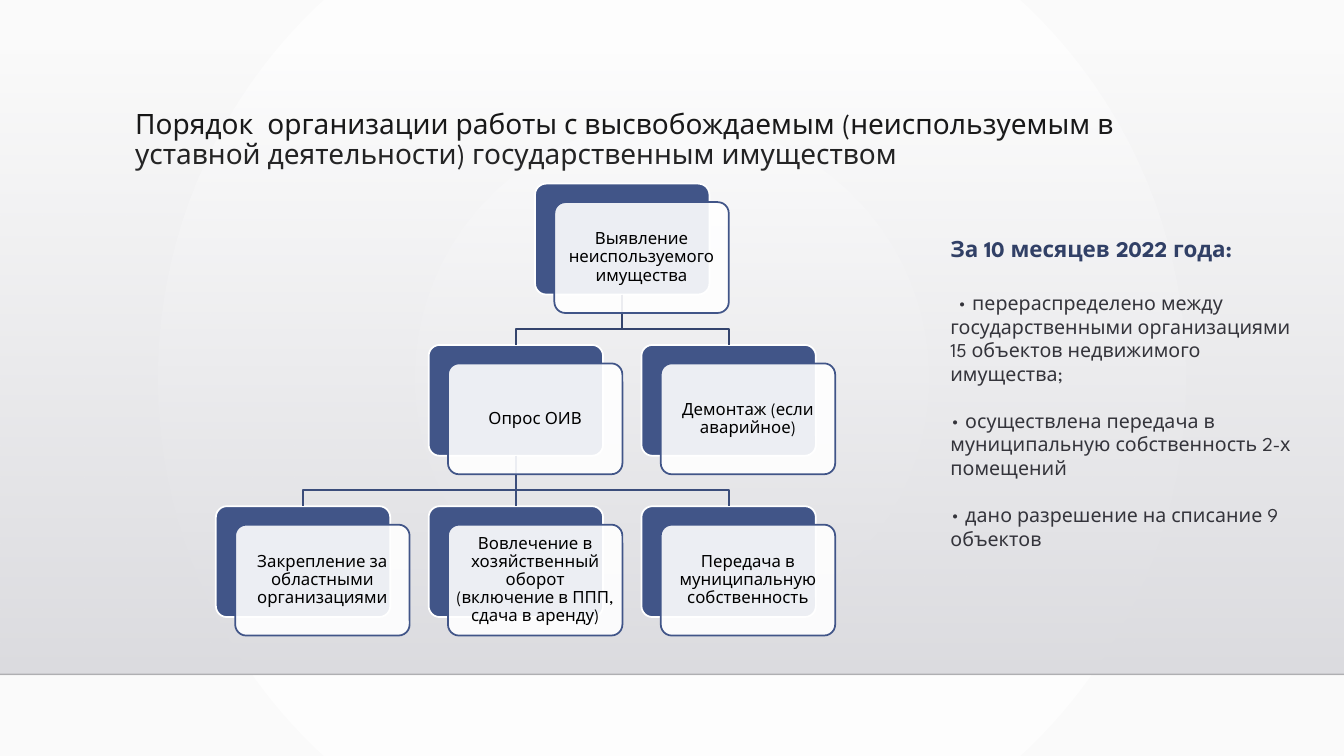
from lxml.etree import SubElement
from pptx import Presentation
from pptx.dml.color import RGBColor
from pptx.enum.shapes import MSO_CONNECTOR, MSO_SHAPE
from pptx.enum.text import MSO_ANCHOR, MSO_AUTO_SIZE, PP_ALIGN
from pptx.oxml import parse_xml
from pptx.oxml.ns import nsdecls, qn
from pptx.util import Pt

FONT = "League Spartan"
COLORS = {
    "black": "000000", "white": "FFFFFF", "card": "415588",
    "upper_link": "34446D", "lower_link": "3B4D7B",
    "heading": "314066", "body": "34343B", "rule": "000001",
    "fade_top": "DCDCE0", "fade_bottom": "DEDEE2", "backdrop": "FAFAFA",
}


def add_span(para, text, size, color, bold=False):
    span = para.add_run()
    span.text = text
    span.font.name = FONT
    span.font.size = Pt(size)
    span.font.bold = bold
    span.font.color.rgb = RGBColor.from_string(COLORS[color])


def set_alpha(color_parent, percent):
    for color in color_parent.iter(qn("a:srgbClr")):
        SubElement(color, qn("a:alpha"), val=str(percent * 1000))


deck = Presentation()
deck.slide_width, deck.slide_height = Pt(960), Pt(540)
page = deck.slides.add_slide(deck.slide_layouts[5])
shapes = page.shapes

# Background: radial gradient
page.background.fill.solid()
back_props = page.background.fill._xPr
back_props.replace(back_props.find(qn("a:solidFill")), parse_xml(
    f'<a:gradFill {nsdecls("a")} rotWithShape="1"><a:gsLst>'
    f'<a:gs pos="0"><a:srgbClr val="{COLORS["white"]}"/></a:gs>'
    f'<a:gs pos="100000"><a:srgbClr val="{COLORS["backdrop"]}"/></a:gs></a:gsLst>'
    '<a:path path="circle"><a:fillToRect l="50000" t="50000" r="50000" b="50000"/>'
    '</a:path></a:gradFill>'))

# Grey fade and the rule under it
fade = shapes.add_shape(MSO_SHAPE.RECTANGLE, 0, Pt(36.7), Pt(960), Pt(445))
fade.shadow.inherit = False
fade.line.fill.background()
fade.fill.gradient()
fade.fill.gradient_angle = 270
stops = zip(fade.fill.gradient_stops, ("fade_top", "fade_bottom"), (0, 100), (0, 1))
for stop, color, alpha, position in stops:
    stop.position = position
    stop.color.rgb = RGBColor.from_string(COLORS[color])
    set_alpha(stop._gs, alpha)

rule = shapes.add_connector(MSO_CONNECTOR.STRAIGHT, 0, Pt(481.7), Pt(960), Pt(481.7))
rule.line.width = Pt(1)
rule.line.color.rgb = RGBColor.from_string(COLORS["rule"])
set_alpha(rule.line._ln, 20)
SubElement(rule._element.spPr, qn("a:effectLst"))

# Title
title = shapes.title
title.left, title.top, title.width, title.height = Pt(89.3), Pt(74.9), Pt(756), Pt(82.8)
title.text_frame.auto_size = MSO_AUTO_SIZE.NONE
title.text_frame.word_wrap = True
title.text_frame.vertical_anchor = MSO_ANCHOR.TOP
para = title.text_frame.paragraphs[0]
para.alignment = PP_ALIGN.LEFT
para.line_spacing = 0.9
add_span(para, "Порядок  организации работы с высвобождаемым (неиспользуемым в "
         "уставной деятельности) государственным имуществом", 20, "black")

# Chart layout: column, row and label of each step
LEFT, TOP, COLUMN_STEP, ROW_STEP = 154.2, 131.2, 152, 115.2
CARD_WIDTH, CARD_HEIGHT, SHIFT_X, SHIFT_Y = 124.6, 79.2, 13.8, 13.2
STEPS = {
    "detect": (1.5, 0, "Выявление неиспользуемого имущества"),
    "survey": (1, 1, "Опрос ОИВ"),
    "dismantle": (2, 1, "Демонтаж (если аварийное)"),
    "assign": (0, 2, "Закрепление за областными организациями"),
    "engage": (1, 2, "Вовлечение в хозяйственный оборот (включение в ППП, сдача в аренду)"),
    "transfer": (2, 2, "Передача в муниципальную собственность"),
}
LINKS = [
    ("detect", "survey", "upper_link"), ("detect", "dismantle", "upper_link"),
    ("survey", "assign", "lower_link"), ("survey", "engage", "lower_link"),
    ("survey", "transfer", "lower_link"),
]

# Blue cards
cards = {}
for name, (column, row, label) in STEPS.items():
    card = shapes.add_shape(
        MSO_SHAPE.ROUNDED_RECTANGLE, Pt(LEFT + column * COLUMN_STEP),
        Pt(TOP + row * ROW_STEP), Pt(CARD_WIDTH), Pt(CARD_HEIGHT))
    card.adjustments[0] = 0.1
    card.shadow.inherit = False
    card.fill.solid()
    card.fill.fore_color.rgb = RGBColor.from_string(COLORS["card"])
    card.line.width = Pt(1.25)
    card.line.color.rgb = RGBColor.from_string(COLORS["white"])
    cards[name] = card

# Links from each card to the ones below
for parent, child, color in LINKS:
    start, end = cards[parent], cards[child]
    start_x, end_x = start.left + start.width // 2, end.left + end.width // 2
    start_y, end_y = start.top + start.height, end.top
    if start.left == end.left:
        link = shapes.add_connector(MSO_CONNECTOR.STRAIGHT, start_x, start_y, end_x, end_y)
        link.begin_connect(start, 2)
        link.end_connect(end, 0)
        SubElement(link._element.spPr, qn("a:effectLst"))
    else:
        turn_y = end_y - Pt(11.5)
        builder = shapes.build_freeform(start_x, start_y)
        builder.add_line_segments(
            [(start_x, turn_y), (end_x, turn_y), (end_x, end_y)], close=False)
        link = builder.convert_to_shape()
        link.shadow.inherit = False
        link.fill.background()
    link.line.width = Pt(1.25)
    link.line.color.rgb = RGBColor.from_string(COLORS[color])

# White panels with the labels
for name, (column, row, label) in STEPS.items():
    card = cards[name]
    panel = shapes.add_shape(
        MSO_SHAPE.ROUNDED_RECTANGLE, card.left + Pt(SHIFT_X), card.top + Pt(SHIFT_Y),
        card.width, card.height)
    panel.adjustments[0] = 0.1
    panel.shadow.inherit = False
    panel.fill.solid()
    panel.fill.fore_color.rgb = RGBColor.from_string(COLORS["white"])
    set_alpha(panel._element.spPr, 90)
    panel.line.width = Pt(1.25)
    panel.line.color.rgb = RGBColor.from_string(COLORS["card"])
    frame = panel.text_frame
    frame.word_wrap = True
    frame.vertical_anchor = MSO_ANCHOR.MIDDLE
    frame.margin_left = frame.margin_right = Pt(3.6)
    frame.margin_top = frame.margin_bottom = Pt(3.6)
    para = frame.paragraphs[0]
    para.alignment = PP_ALIGN.CENTER
    para.line_spacing = 0.9
    add_span(para, label, 12, "black")

# Results on the right
results = shapes.add_textbox(Pt(671.8), Pt(164.2), Pt(266.4), Pt(237.6))
frame = results.text_frame
frame.word_wrap = True
frame.auto_size = MSO_AUTO_SIZE.SHAPE_TO_FIT_TEXT
add_span(frame.paragraphs[0], "За 10 месяцев 2022 года:", 16, "heading", bold=True)
RESULTS = [
    ("• перераспределено между государственными организациями "
     "15 объектов недвижимого имущества;", 21, 5),
    ("• осуществлена передача в муниципальную собственность 2-х помещений", 16.8, 0),
    ("• дано разрешение на списание 9 объектов", 16.8, 0),
]
for text, gap, indent in RESULTS:
    para = frame.add_paragraph()
    para.space_before = Pt(gap)
    para._p.get_or_add_pPr().set("indent", str(Pt(indent)))
    add_span(para, text, 14, "body")

deck.save("out.pptx")
